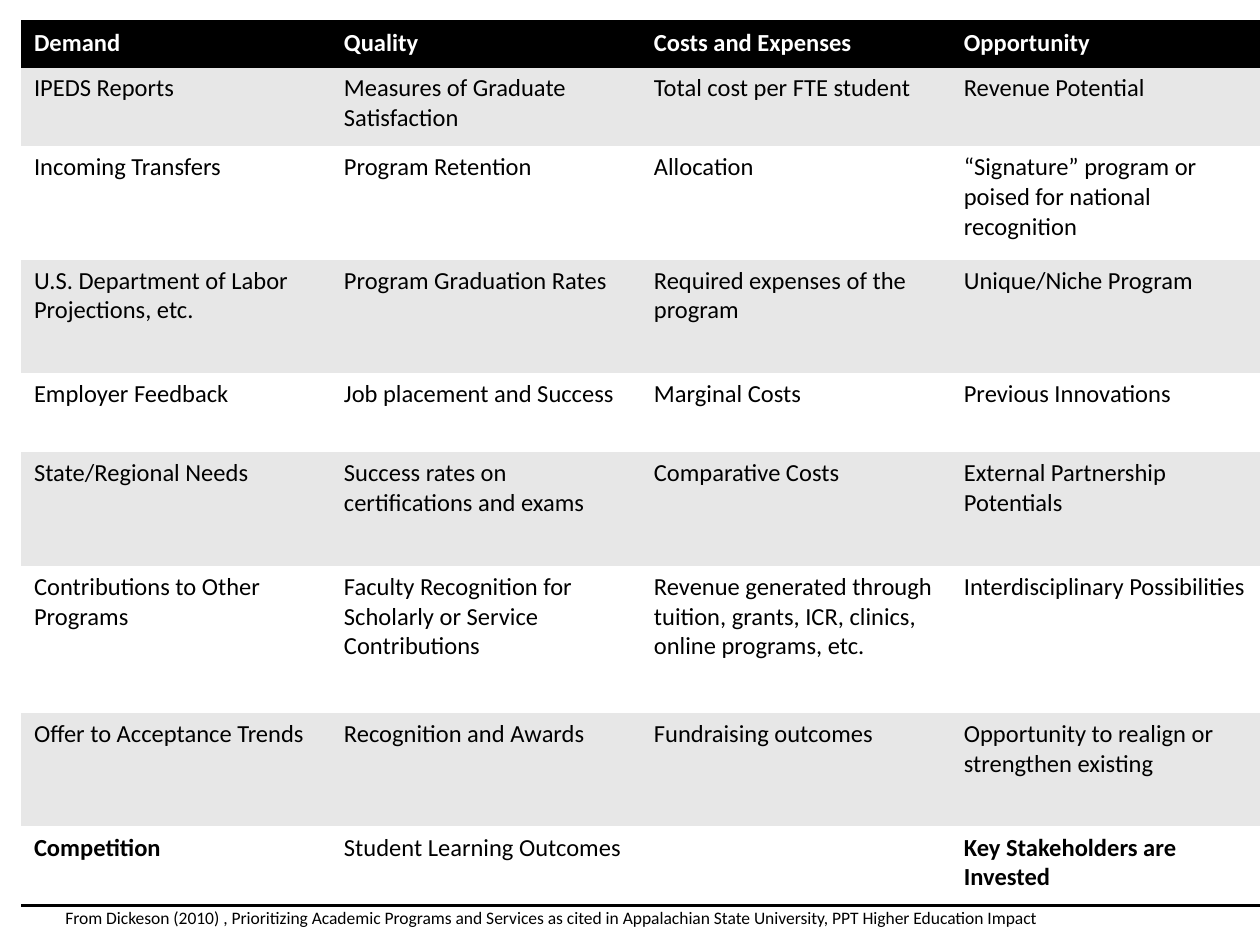
from pptx import Presentation
from pptx.dml.color import RGBColor
from pptx.enum.text import MSO_AUTO_SIZE as AutoSize
from pptx.oxml import parse_xml
from pptx.oxml.ns import nsdecls, qn
from pptx.util import Inches, Pt

BLACK = RGBColor(0x00, 0x00, 0x00)
WHITE = RGBColor(0xFF, 0xFF, 0xFF)
BAND_GRAY = RGBColor(0xE7, 0xE7, 0xE7)
FONT = "Calibri"
NO_STYLE = "{2D5ABB26-0587-4C30-8999-92F81FD0307C}"

ROW_HEIGHTS = [0.36, 0.63, 0.9, 0.9, 0.63, 0.9, 1.17, 0.9, 0.63]
CRITERIA = [
    ["Demand", "Quality", "Costs and Expenses", "Opportunity"],
    ["IPEDS Reports", "Measures of Graduate Satisfaction",
     "Total cost per FTE student", "Revenue Potential"],
    ["Incoming Transfers", "Program Retention", "Allocation",
     "“Signature” program or poised for national recognition"],
    ["U.S. Department of Labor Projections, etc.", "Program Graduation Rates",
     "Required expenses of the program", "Unique/Niche Program"],
    ["Employer Feedback", "Job placement and Success", "Marginal Costs",
     "Previous Innovations"],
    ["State/Regional Needs", "Success rates on certifications and exams",
     "Comparative Costs", "External Partnership Potentials"],
    ["Contributions to Other Programs",
     "Faculty Recognition for Scholarly or Service Contributions",
     "Revenue generated through tuition, grants, ICR, clinics, online programs, etc.",
     "Interdisciplinary Possibilities"],
    ["Offer to Acceptance Trends", "Recognition and Awards",
     "Fundraising outcomes", "Opportunity to realign or strengthen existing"],
    ["Competition", "Student Learning Outcomes", "",
     "Key Stakeholders are Invested"],
]
BOLD_ENTRIES = {"Competition", "Key Stakeholders are Invested"}
SOURCE_NOTE = ("From Dickeson (2010) , Prioritizing Academic Programs and Services "
               "as cited in Appalachian State University, PPT Higher Education Impact")


def style_text(paragraph, size, color, bold=False):
    font = paragraph.font
    font.name, font.size, font.bold = FONT, Pt(size), bold
    font.color.rgb = color


def add_border(cell, side):
    """Draw a 2 pt black rule; call before filling the cell."""
    cell._tc.get_or_add_tcPr().append(parse_xml(
        f'<a:{side} {nsdecls("a")} w="{Pt(2)}"><a:solidFill>'
        f'<a:srgbClr val="{BLACK}"/></a:solidFill></a:{side}>'))


def fill_cell(cell, text, row, last_row):
    is_header = row == 0
    # Rules around the header and below the last row
    if is_header:
        add_border(cell, "lnT")
    if row in (0, last_row):
        add_border(cell, "lnB")
    # Banded background
    cell.fill.solid()
    cell.fill.fore_color.rgb = BLACK if is_header else BAND_GRAY if row % 2 else WHITE
    cell.text = text
    style_text(cell.text_frame.paragraphs[0], 14, WHITE if is_header else BLACK,
               is_header or text in BOLD_ENTRIES)


def add_criteria_table(slide):
    rows, columns = len(CRITERIA), len(CRITERIA[0])
    shape = slide.shapes.add_table(rows, columns, Inches(0.17), Inches(0.17),
                                   Inches(9.83), Inches(sum(ROW_HEIGHTS)))
    for style_id in shape.element.iter(qn("a:tableStyleId")):
        style_id.text = NO_STYLE
    table = shape.table
    for column in table.columns:
        column.width = Inches(2.46)
    for row, (entries, height) in enumerate(zip(CRITERIA, ROW_HEIGHTS)):
        table.rows[row].height = Inches(height)
        for column, text in enumerate(entries):
            fill_cell(table.cell(row, column), text, row, rows - 1)


def add_source_note(slide):
    box = slide.shapes.add_textbox(Inches(0.42), Inches(7.15), Inches(7.92), Inches(0.44))
    frame = box.text_frame
    frame.word_wrap = True
    frame.auto_size = AutoSize.SHAPE_TO_FIT_TEXT
    frame.text = SOURCE_NOTE
    style_text(frame.paragraphs[0], 10, BLACK)


def main():
    presentation = Presentation()
    presentation.slide_width, presentation.slide_height = Inches(10), Inches(7.5)
    slide = presentation.slides.add_slide(presentation.slide_layouts[6])
    add_criteria_table(slide)
    add_source_note(slide)
    presentation.save("out.pptx")


if __name__ == "__main__":
    main()
